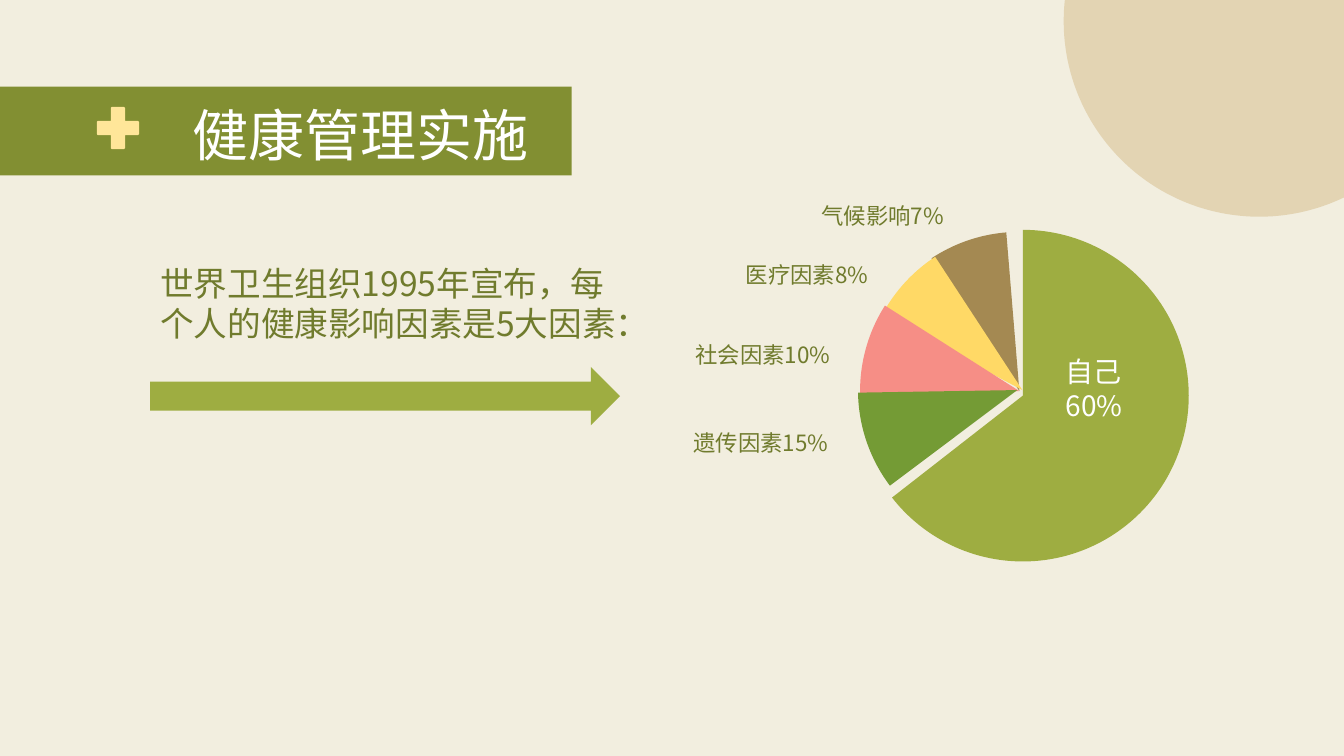
from math import acos, asin, cos, pi, sin

from lxml import etree
from pptx import Presentation
from pptx.dml.color import RGBColor
from pptx.enum.shapes import MSO_SHAPE
from pptx.enum.text import MSO_ANCHOR, MSO_AUTO_SIZE, PP_ALIGN
from pptx.oxml.ns import qn
from pptx.util import Inches, Pt

FONT = "Noto Sans CJK SC"
CREAM = RGBColor(0xF2, 0xEE, 0xDF)
SAND = RGBColor(0xE3, 0xD4, 0xB3)
OLIVE = RGBColor(0x82, 0x8F, 0x32)
DARK_OLIVE = RGBColor(0x70, 0x7B, 0x2D)
LIME = RGBColor(0x9E, 0xAD, 0x41)
GREEN = RGBColor(0x74, 0x9B, 0x35)
PINK = RGBColor(0xF6, 0x8E, 0x86)
YELLOW = RGBColor(0xFF, 0xD9, 0x66)
PALE_YELLOW = RGBColor(0xFF, 0xE6, 0x99)
BROWN = RGBColor(0xA4, 0x89, 0x52)
WHITE = RGBColor(0xFF, 0xFF, 0xFF)
SLIDE_W, SLIDE_H = 13.33, 7.5


def paint(sp, color):
    sp.fill.solid()
    sp.fill.fore_color.rgb = color
    sp.line.fill.background()
    sp.shadow.inherit = False


def add_shape(slide, kind, x, y, w, h, color):
    sp = slide.shapes.add_shape(kind, Inches(x), Inches(y), Inches(w), Inches(h))
    paint(sp, color)
    return sp


def add_outline(slide, points, color):
    points = [(Inches(x), Inches(y)) for x, y in points]
    builder = slide.shapes.build_freeform(*points[0])
    builder.add_line_segments(points[1:])
    paint(builder.convert_to_shape(), color)


def write(sp, text, size, color, spacing=1.0, wrap=True):
    tf = sp.text_frame
    tf.text = text
    tf.word_wrap = wrap
    tf.auto_size = MSO_AUTO_SIZE.SHAPE_TO_FIT_TEXT
    tf.vertical_anchor = MSO_ANCHOR.TOP
    p = tf.paragraphs[0]
    p.alignment = PP_ALIGN.LEFT
    p.line_spacing = spacing
    font = p.runs[0].font
    font.size = Pt(size)
    font.name = FONT
    font.color.rgb = color
    # East Asian typeface
    etree.SubElement(font._element, qn("a:ea")).set("typeface", FONT)


def add_text(slide, x, y, w, h, text, size, color, spacing=1.0):
    sp = slide.shapes.add_textbox(Inches(x), Inches(y), Inches(w), Inches(h))
    write(sp, text, size, color, spacing)


def add_corner_disc(slide, cx, cy, radius):
    # Disc cut off by the top and right edges of the slide
    start = acos((SLIDE_W - cx) / radius)
    end = pi + asin(cy / radius)
    steps = 90
    angles = [start + (end - start) * i / steps for i in range(steps + 1)]
    rim = [(cx + radius * cos(a), cy + radius * sin(a)) for a in angles]
    add_outline(slide, [(SLIDE_W, 0)] + rim, SAND)


def add_plus(slide, cx, cy):
    # One arm with trimmed corners, turned four times
    arm = [(-0.07, -0.07), (-0.07, -0.2), (-0.06, -0.21), (0.06, -0.21), (0.07, -0.2)]
    points = []
    for _ in range(4):
        points += [(cx + x, cy + y) for x, y in arm]
        arm = [(-y, x) for x, y in arm]
    add_outline(slide, points, PALE_YELLOW)


def add_title_band(slide, x, y, w, h):
    add_shape(slide, MSO_SHAPE.RECTANGLE, x, y, w, h, OLIVE)
    add_plus(slide, x + 1.17, y + 0.41)
    title = slide.shapes.title
    title.left, title.top = Inches(x + 1.81), Inches(y + 0.09)
    title.width, title.height = Inches(3.57), Inches(0.77)
    write(title, "健康管理实施", 40, WHITE, wrap=False)
    slide.shapes._spTree.append(title._element)  # bring above the band


def add_intro(slide, x, y, w):
    add_text(slide, x, y, w, 0.91,
             "世界卫生组织1995年宣布，每个人的健康影响因素是5大因素：", 24, DARK_OLIVE)
    add_shape(slide, MSO_SHAPE.RIGHT_ARROW, x, y + 1.08, 4.66, 0.58, LIME)


def add_factor_pie(slide, x, y):
    # Slices: offset, diameter, rotation, start and end angle, colour
    slices = [
        (1.72, 0.46, 3.29, 0, 270, 142.07, LIME),
        (1.75, 0.48, 3.16, 123.2, 113.33, 142.07, BROWN),
        (1.78, 0.47, 3.16, 94.7, 113.33, 142.07, YELLOW),
        (1.75, 0.48, 3.16, 64.7, 111.8, 147.76, PINK),
        (1.73, 0.47, 3.16, 31.3, 111.8, 147.76, GREEN),
    ]
    for dx, dy, size, rotation, start, end, color in slices:
        sp = add_shape(slide, MSO_SHAPE.ARC, x + dx, y + dy, size, size, color)
        sp.rotation = rotation
        # Arc angles are held in 60000ths of a degree, adjustments in 100000ths
        sp.adjustments[0] = start * 0.6
        sp.adjustments[1] = end * 0.6

    # Labels beside the small slices
    labels = [
        (1.27, 0, 1.67, "气候影响7%"),
        (0.52, 0.59, 1.67, "医疗因素8%"),
        (0.02, 1.38, 1.79, "社会因素10%"),
        (0, 2.26, 1.79, "遗传因素15%"),
    ]
    for dx, dy, w, text in labels:
        add_text(slide, x + dx, y + dy, w, 0.5, text, 16, DARK_OLIVE, 1.5)
    add_text(slide, x + 3.69, y + 1.65, 1.03, 0.77, "自己60%", 20, WHITE)


def main():
    prs = Presentation()
    prs.slide_width, prs.slide_height = Inches(SLIDE_W), Inches(SLIDE_H)
    slide = prs.slides.add_slide(prs.slide_layouts[5])
    slide.background.fill.solid()
    slide.background.fill.fore_color.rgb = CREAM
    add_intro(slide, 1.49, 2.56, 4.88)
    add_factor_pie(slide, 6.78, 1.82)
    add_corner_disc(slide, 12.49, 0.21, 1.94)
    add_title_band(slide, 0, 0.86, 5.67, 0.88)
    prs.save("out.pptx")


if __name__ == "__main__":
    main()
